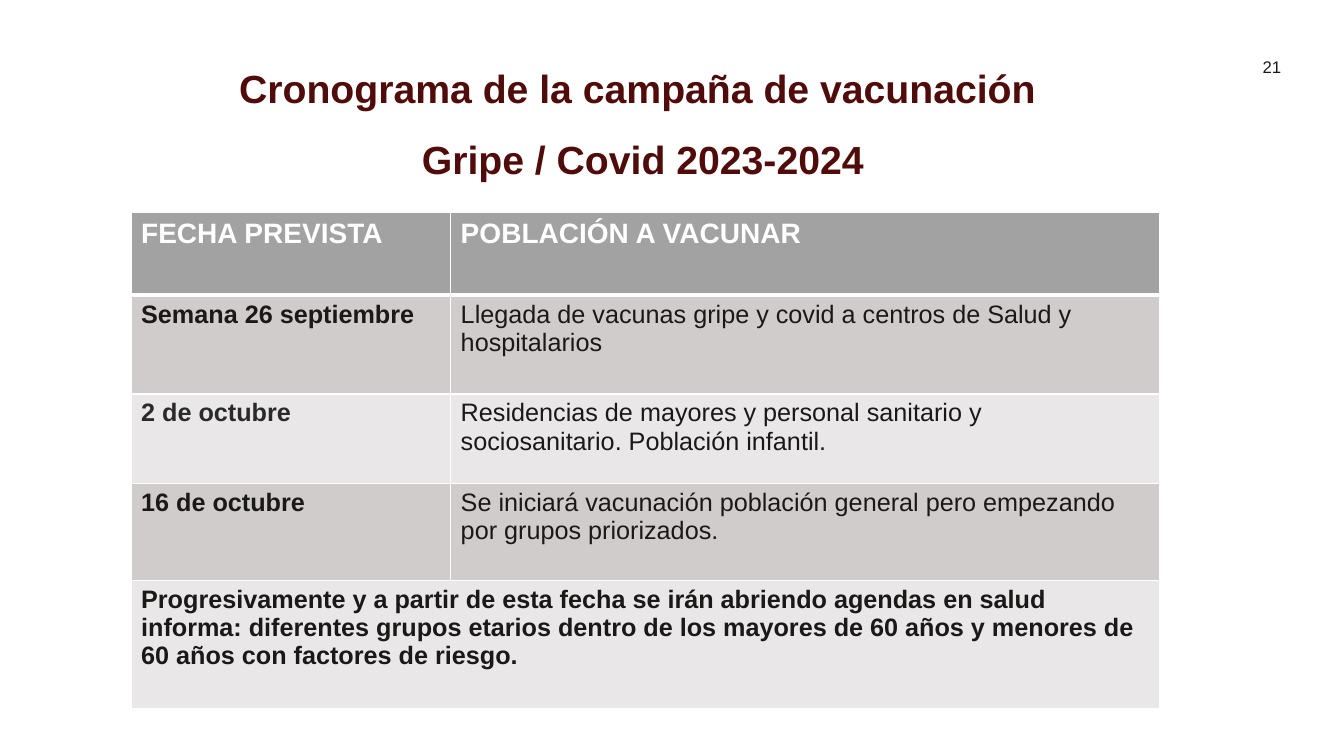
from dataclasses import dataclass

from lxml.etree import SubElement
from pptx import Presentation
from pptx.dml.color import RGBColor
from pptx.enum.text import MSO_ANCHOR, PP_ALIGN
from pptx.oxml.ns import qn
from pptx.slide import Slide
from pptx.table import _Cell
from pptx.text.text import TextFrame
from pptx.util import Inches, Pt

FONT = "Arial"
WHITE = RGBColor(0xFF, 0xFF, 0xFF)
MAROON = RGBColor(0x50, 0x0C, 0x0A)
INK = RGBColor(0x1A, 0x19, 0x18)
CHARCOAL = RGBColor(0x2A, 0x2A, 0x2A)
HEADER_GREY = RGBColor(0xA2, 0xA2, 0xA2)
DARK_BAND = RGBColor(0xD0, 0xCC, 0xCC)
LIGHT_BAND = RGBColor(0xE9, 0xE7, 0xE7)

COLUMN_WIDTHS = (3.17, 7.03)


@dataclass(frozen=True)
class Stage:
    date: str
    population: str
    height: float
    fill: RGBColor
    date_color: RGBColor = INK
    population_color: RGBColor = INK
    population_bold: bool = False
    size: int = 18


STAGES = (
    Stage("FECHA PREVISTA", "POBLACIÓN A VACUNAR", 0.82, HEADER_GREY, WHITE, WHITE, True, 20),
    Stage("Semana 26 septiembre",
          "Llegada de vacunas gripe y covid a centros de Salud y hospitalarios",
          0.98, DARK_BAND),
    Stage("2 de octubre",
          "Residencias de mayores y personal sanitario y sociosanitario. Población infantil.",
          0.89, LIGHT_BAND, CHARCOAL),
    Stage("16 de octubre",
          "Se iniciará vacunación población general pero empezando por grupos priorizados.",
          0.96, DARK_BAND),
    Stage("Progresivamente y a partir de esta fecha se irán abriendo agendas en salud informa: "
          "diferentes grupos etarios dentro de los mayores de 60 años y menores de 60 años "
          "con factores de riesgo.", "", 1.27, LIGHT_BAND),
)


def format_text(frame: TextFrame, size: int, color: RGBColor, bold: bool) -> None:
    for paragraph in frame.paragraphs:
        for run in paragraph.runs:
            run.font.name = FONT
            run.font.size = Pt(size)
            run.font.bold = bold
            run.font.color.rgb = color


def set_borders(cell: _Cell, top: int, bottom: int) -> None:
    properties = cell._tc.get_or_add_tcPr()
    widths = {"a:lnL": 1, "a:lnR": 1, "a:lnT": top, "a:lnB": bottom}
    for tag, width in widths.items():
        border = SubElement(properties, qn(tag), w=str(Pt(width)))
        fill = SubElement(border, qn("a:solidFill"))
        SubElement(fill, qn("a:srgbClr"), val=str(WHITE))


def fill_cell(cell: _Cell, text: str, stage: Stage, color: RGBColor, bold: bool) -> None:
    cell.text_frame.text = text
    format_text(cell.text_frame, stage.size, color, bold)
    set_borders(cell, 3 if stage is STAGES[1] else 1, 3 if stage is STAGES[0] else 1)
    cell.fill.solid()
    cell.fill.fore_color.rgb = stage.fill


def add_page_number(slide: Slide) -> None:
    box = slide.shapes.add_textbox(Inches(12.46), Inches(0.55), Inches(0.31), Inches(0.22))
    frame = box.text_frame
    frame.word_wrap = False
    frame.vertical_anchor = MSO_ANCHOR.MIDDLE
    frame.margin_left = frame.margin_right = 0
    frame.margin_top = frame.margin_bottom = 0
    frame.text = "21"
    frame.paragraphs[0].alignment = PP_ALIGN.CENTER
    format_text(frame, 12, INK, False)


def add_title(slide: Slide) -> None:
    box = slide.shapes.add_textbox(Inches(0.6), Inches(0.36), Inches(11.55), Inches(1.51))
    frame = box.text_frame
    frame.word_wrap = True
    frame.text = "Cronograma de la campaña de vacunación \nGripe / Covid 2023-2024"
    for paragraph in frame.paragraphs:
        paragraph.alignment = PP_ALIGN.CENTER
        paragraph.line_spacing = 1.5
    format_text(frame, 28, MAROON, True)


def add_schedule(slide: Slide) -> None:
    schedule = slide.shapes.add_table(
        len(STAGES), len(COLUMN_WIDTHS), Inches(1.3), Inches(2.11),
        Inches(sum(COLUMN_WIDTHS)), Inches(sum(stage.height for stage in STAGES))).table
    for column, width in zip(schedule.columns, COLUMN_WIDTHS):
        column.width = Inches(width)
    for index, stage in enumerate(STAGES):
        schedule.rows[index].height = Inches(stage.height)
        date_cell, population_cell = schedule.rows[index].cells
        fill_cell(date_cell, stage.date, stage, stage.date_color, True)
        fill_cell(population_cell, stage.population, stage,
                  stage.population_color, stage.population_bold)
        if not stage.population:
            date_cell.merge(population_cell)


def main() -> None:
    presentation = Presentation()
    presentation.slide_width = Inches(13.33)
    presentation.slide_height = Inches(7.5)
    slide = presentation.slides.add_slide(presentation.slide_layouts[6])
    add_page_number(slide)
    add_title(slide)
    add_schedule(slide)
    presentation.save("out.pptx")


if __name__ == "__main__":
    main()
